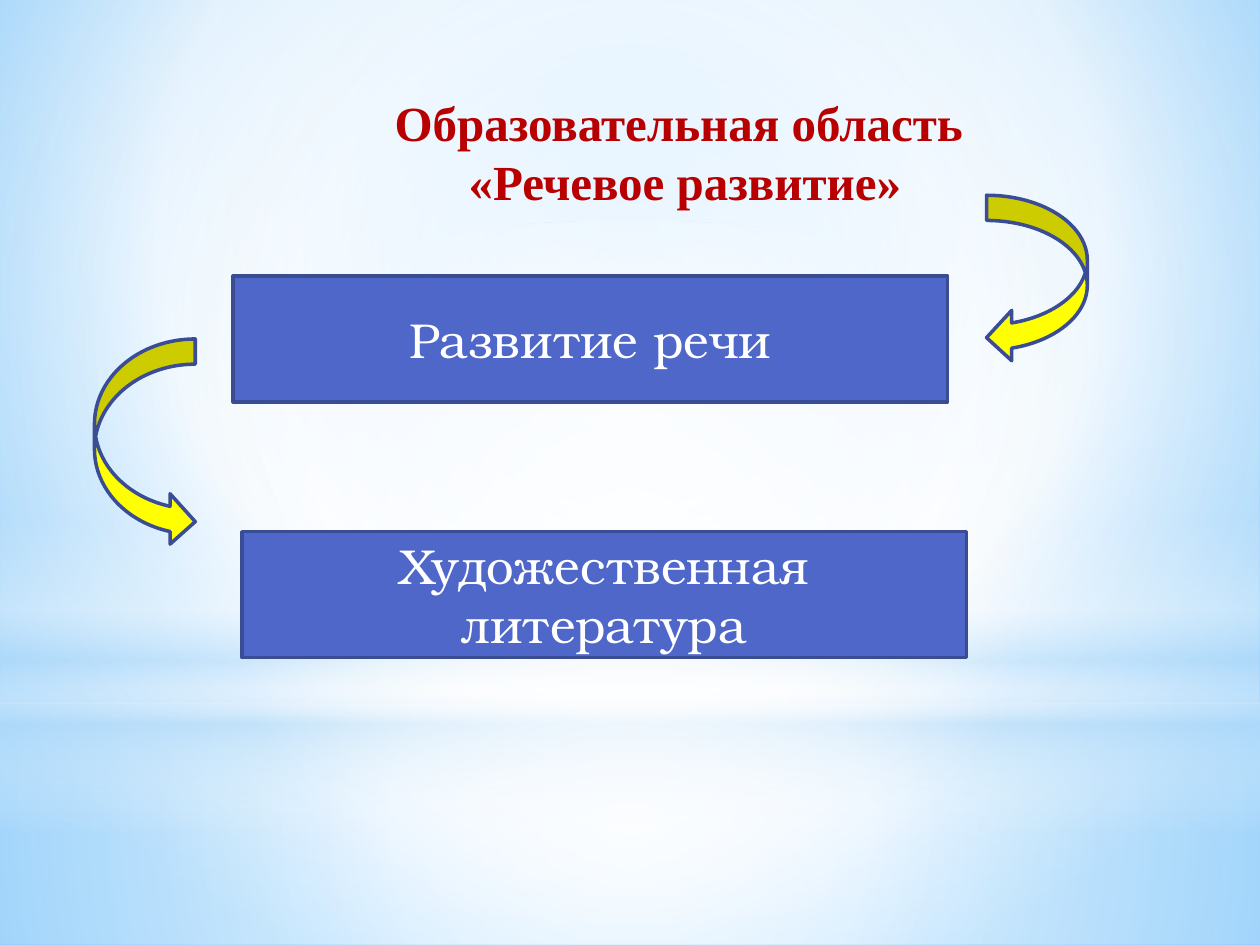
from lxml import etree
from pptx import Presentation
from pptx.dml.color import RGBColor
from pptx.enum.shapes import MSO_SHAPE
from pptx.enum.text import MSO_ANCHOR, MSO_AUTO_SIZE, PP_ALIGN
from pptx.oxml.ns import qn
from pptx.util import Inches, Pt

RECTANGLE, OVAL = MSO_SHAPE.RECTANGLE, MSO_SHAPE.OVAL
LEFT_ARROW, RIGHT_ARROW = MSO_SHAPE.CURVED_LEFT_ARROW, MSO_SHAPE.CURVED_RIGHT_ARROW
CENTER, MIDDLE, NO_FIT = PP_ALIGN.CENTER, MSO_ANCHOR.MIDDLE, MSO_AUTO_SIZE.NONE

BLUE, OUTLINE, YELLOW, RED, WHITE = "4E67C8", "3A4C94", "FFFF00", "B80000", "FFFFFF"
SKY = "B4DCFA"
MIDPOINT = (50, 50, 50, 50)

BACKGROUND = [(0, "9ED5FF", 100), (60, WHITE, 100), (100, "5BB9FF", 100)]
GLOWS = [
    (RECTANGLE, (0, 5.58, 10, 1.92),
     [(0, WHITE, 91), (37, WHITE, 76), (100, SKY, 79)], MIDPOINT),
    (RECTANGLE, (0, 0, 10, 5.58),
     [(0, WHITE, 89), (48, WHITE, 62), (100, SKY, 79)], MIDPOINT),
    (RECTANGLE, (0, 4.12, 10, 2.5),
     [(0, WHITE, 0), (29, WHITE, 30), (45, SKY, 40),
      (55, WHITE, 26), (65, SKY, 60), (100, WHITE, 0)], None),
    (OVAL, (0, 1.75, 10, 5.58), [(0, WHITE, 100), (56, WHITE, 0)], MIDPOINT),
]


def color(value):
    return RGBColor.from_string(value)


def add_node(parent, tag, **attributes):
    return etree.SubElement(parent, qn(tag), {k: str(v) for k, v in attributes.items()})


def set_gradient(fill, properties, stops, focus):
    fill.solid()
    solid = properties.find(qn("a:solidFill"))
    gradient = etree.Element(qn("a:gradFill"), rotWithShape="1")
    stop_list = add_node(gradient, "a:gsLst")
    for position, value, opacity in stops:
        stop = add_node(stop_list, "a:gs", pos=position * 1000)
        tint = add_node(stop, "a:srgbClr", val=value)
        if opacity < 100:
            add_node(tint, "a:alpha", val=opacity * 1000)
    if focus:
        circle = add_node(gradient, "a:path", path="circle")
        sides = {side: edge * 1000 for side, edge in zip("ltrb", focus)}
        add_node(circle, "a:fillToRect", **sides)
    else:
        add_node(gradient, "a:lin", ang=90 * 60000, scaled=0)
    properties.replace(solid, gradient)


def add_shape(page, kind, box):
    shape = page.shapes.add_shape(kind, *map(Inches, box))
    shape.shadow.inherit = False
    return shape


def add_backdrop(page):
    fill = page.background.fill
    fill.solid()
    properties = page.element.find(".//" + qn("p:bgPr"))
    set_gradient(fill, properties, BACKGROUND, (20, 10, 20, 60))
    for kind, box, stops, focus in GLOWS:
        glow = add_shape(page, kind, box)
        glow.line.fill.background()
        set_gradient(glow.fill, glow.element.spPr, stops, focus)


def write_centered(frame, text, font_name, font_color, bold=False):
    frame.text = text
    frame.word_wrap = True
    frame.auto_size = NO_FIT
    frame.vertical_anchor = MIDDLE
    for para in frame.paragraphs:
        para.alignment = CENTER
        para.font.name = font_name
        para.font.size = Pt(28)
        para.font.bold = bold
        para.font.color.rgb = color(font_color)


def place_title(page, box, text):
    title = page.shapes.title
    title.left, title.top, title.width, title.height = map(Inches, box)
    write_centered(title.text_frame, text, "Times New Roman", RED, bold=True)
    title.element.getparent().append(title.element)


def add_outlined(page, kind, box, fill_color):
    shape = add_shape(page, kind, box)
    shape.fill.solid()
    shape.fill.fore_color.rgb = color(fill_color)
    shape.line.color.rgb = color(OUTLINE)
    shape.line.width = Pt(2)
    return shape


def add_topic(page, box, text):
    topic = add_outlined(page, RECTANGLE, box, BLUE)
    write_centered(topic.text_frame, text, "TeX Gyre Bonum", WHITE)


def main():
    deck = Presentation()
    deck.slide_width, deck.slide_height = Inches(10), Inches(7.5)
    page = deck.slides.add_slide(deck.slide_layouts[5])
    add_backdrop(page)
    place_title(page, (1.3, 0.68, 8.27, 1.04),
                "Образовательная область \n«Речевое развитие»")
    add_outlined(page, LEFT_ARROW, (7.83, 1.55, 0.8, 1.33), YELLOW)
    add_topic(page, (1.85, 2.19, 5.67, 1), "Развитие речи")
    add_outlined(page, RIGHT_ARROW, (0.75, 2.69, 0.8, 1.65), YELLOW)
    add_topic(page, (1.92, 4.22, 5.75, 1), "Художественная литература")
    deck.save("out.pptx")


if __name__ == "__main__":
    main()
